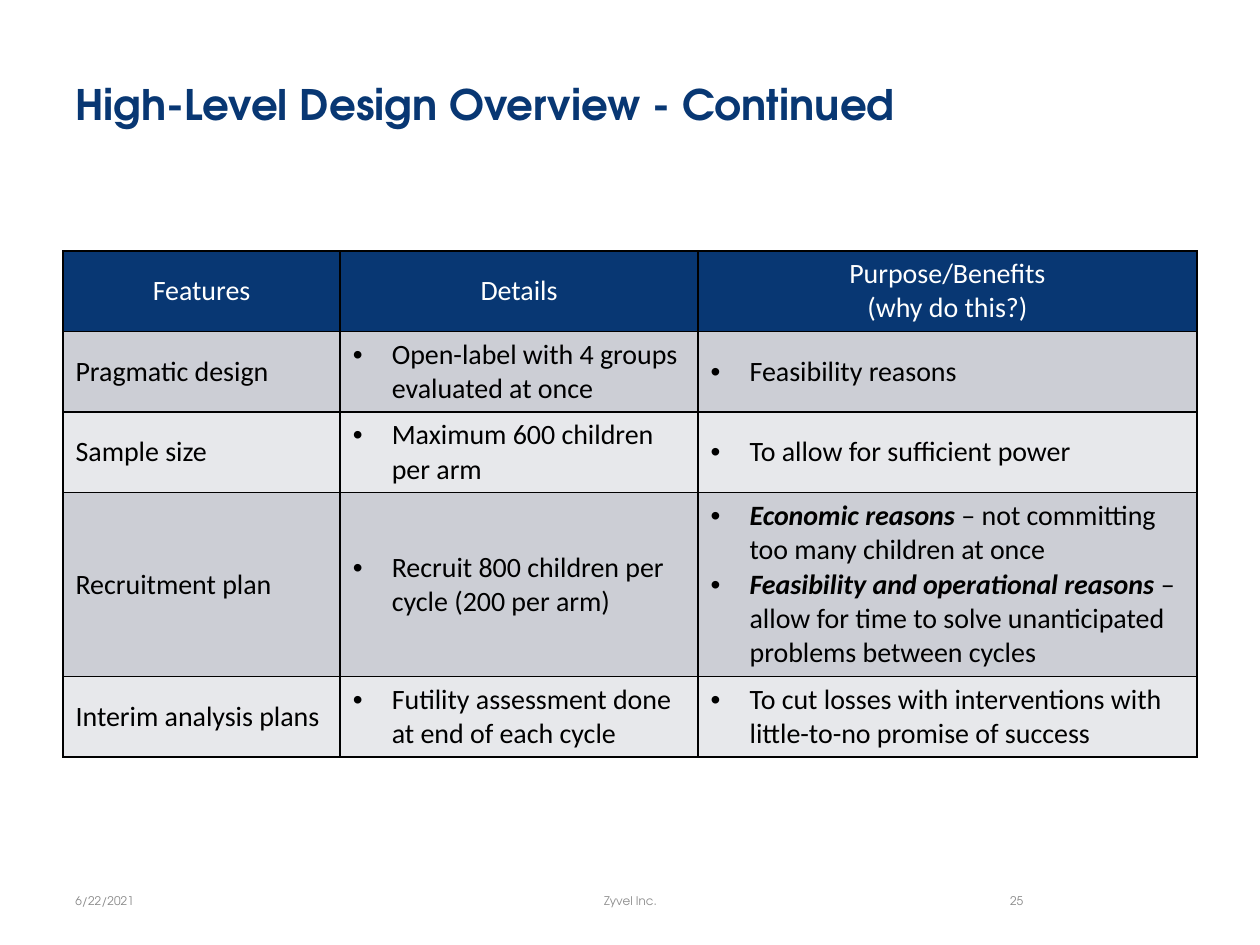
import lxml.etree
import pptx
import pptx.dml.color
import pptx.enum.text
import pptx.oxml.ns
import pptx.util

Inches = pptx.util.Inches
ALIGN = pptx.enum.text.PP_ALIGN
MIDDLE = pptx.enum.text.MSO_ANCHOR.MIDDLE
NAVY = "083773"
BAND_FILLS = ["CCCED5", "E7E8EB"]
TITLE_FORMAT = {"name": "TeX Gyre Adventor", "size": pptx.util.Pt(24), "bold": True}
FOOTER_FORMAT = {"name": "TeX Gyre Adventor", "size": pptx.util.Pt(6.8), "bold": False}
CELL_FORMAT = {"name": "Calibri", "size": pptx.util.Pt(16), "bold": False, "italic": False}
EMPHASIS_FORMAT = {**CELL_FORMAT, "bold": True, "italic": True}

COLUMN_WIDTHS = [2.2, 2.84, 3.96]
ROW_HEIGHTS = [0.64, 0.64, 0.64, 1.46, 0.64]
HEADERS = [["Features"], ["Details"], ["Purpose/Benefits", "(why do this?)"]]
FEATURES = [
    ("Pragmatic design", "Open-label with 4 groups evaluated at once",
     [("", "Feasibility reasons")]),
    ("Sample size", "Maximum 600 children per arm",
     [("", "To allow for sufficient power")]),
    ("Recruitment plan", "Recruit 800 children per cycle (200 per arm)",
     [("Economic reasons ", "– not committing too many children at once"),
      ("Feasibility and operational reasons ",
       "– allow for time to solve unanticipated problems between cycles")]),
    ("Interim analysis plans", "Futility assessment done at end of each cycle",
     [("", "To cut losses with interventions with little-to-no promise of success")]),
]
FOOTERS = [
    (3.42, 3.17, "Zyvel Inc.", "8C8C8C", ALIGN.CENTER),
    (0.5, 2.33, "6/22/2021", "898989", ALIGN.LEFT),
    (7.17, 1.05, "25", "898989", ALIGN.RIGHT),
]


def color(hex_value):
    return pptx.dml.color.RGBColor.from_string(hex_value)


def add_span(para, text, formats, hex_value):
    span = para.add_run()
    span.text = text
    for name, value in formats.items():
        setattr(span.font, name, value)
    span.font.color.rgb = color(hex_value)


def add_text(slide, left, top, width, height, text, formats, hex_value, align):
    box = slide.shapes.add_textbox(Inches(left), Inches(top), Inches(width), Inches(height))
    frame = box.text_frame
    frame.word_wrap = True
    frame.vertical_anchor = MIDDLE
    frame.paragraphs[0].alignment = align
    add_span(frame.paragraphs[0], text, formats, hex_value)


def add_bullet(para):
    properties = para._p.get_or_add_pPr()
    indent = Inches(0.31)
    properties.set("marL", str(indent))
    properties.set("indent", str(-indent))
    for tag, name, value in [("a:buFont", "typeface", "Arial"), ("a:buChar", "char", "•")]:
        element = lxml.etree.SubElement(properties, pptx.oxml.ns.qn(tag))
        element.set(name, value)


def add_borders(cell):
    properties = cell._tc.get_or_add_tcPr()
    for side in ["L", "R", "T", "B"]:
        line = lxml.etree.SubElement(properties, pptx.oxml.ns.qn("a:ln" + side))
        line.set("w", str(pptx.util.Pt(1)))
        fill = lxml.etree.SubElement(line, pptx.oxml.ns.qn("a:solidFill"))
        lxml.etree.SubElement(fill, pptx.oxml.ns.qn("a:srgbClr")).set("val", "000000")


def fill_cell(cell, lines, fill, text_color, align=ALIGN.LEFT, bulleted=False):
    add_borders(cell)
    cell.fill.solid()
    cell.fill.fore_color.rgb = color(fill)
    cell.vertical_anchor = MIDDLE
    frame = cell.text_frame
    for index, (emphasis, text) in enumerate(lines):
        para = frame.add_paragraph() if index else frame.paragraphs[0]
        para.alignment = align
        if bulleted:
            add_bullet(para)
        if emphasis:
            add_span(para, emphasis, EMPHASIS_FORMAT, text_color)
        add_span(para, text, CELL_FORMAT, text_color)


def add_features_table(slide):
    frame = slide.shapes.add_table(
        len(ROW_HEIGHTS), len(COLUMN_WIDTHS), Inches(0.5), Inches(1.99),
        Inches(sum(COLUMN_WIDTHS)), Inches(sum(ROW_HEIGHTS)))
    table = frame.table
    for column, width in zip(table.columns, COLUMN_WIDTHS):
        column.width = Inches(width)
    for row, height in zip(table.rows, ROW_HEIGHTS):
        row.height = Inches(height)
    for index, header in enumerate(HEADERS):
        lines = [("", text) for text in header]
        fill_cell(table.cell(0, index), lines, NAVY, "FFFFFF", ALIGN.CENTER)
    for row, (feature, detail, benefits) in enumerate(FEATURES, 1):
        fill = BAND_FILLS[(row - 1) % 2]
        for column, lines in enumerate([[("", feature)], [("", detail)], benefits]):
            fill_cell(table.cell(row, column), lines, fill, "000000", bulleted=column > 0)


def main():
    deck = pptx.Presentation()
    deck.slide_width, deck.slide_height = Inches(10), Inches(7.5)
    slide = deck.slides.add_slide(deck.slide_layouts[6])
    add_text(slide, 0.5, 0.3, 9, 1.04, "High-Level Design Overview - Continued",
             TITLE_FORMAT, NAVY, ALIGN.LEFT)
    for left, width, text, hex_value, align in FOOTERS:
        add_text(slide, left, 6.95, width, 0.4, text, FOOTER_FORMAT, hex_value, align)
    add_features_table(slide)
    deck.save("out.pptx")


if __name__ == "__main__":
    main()
